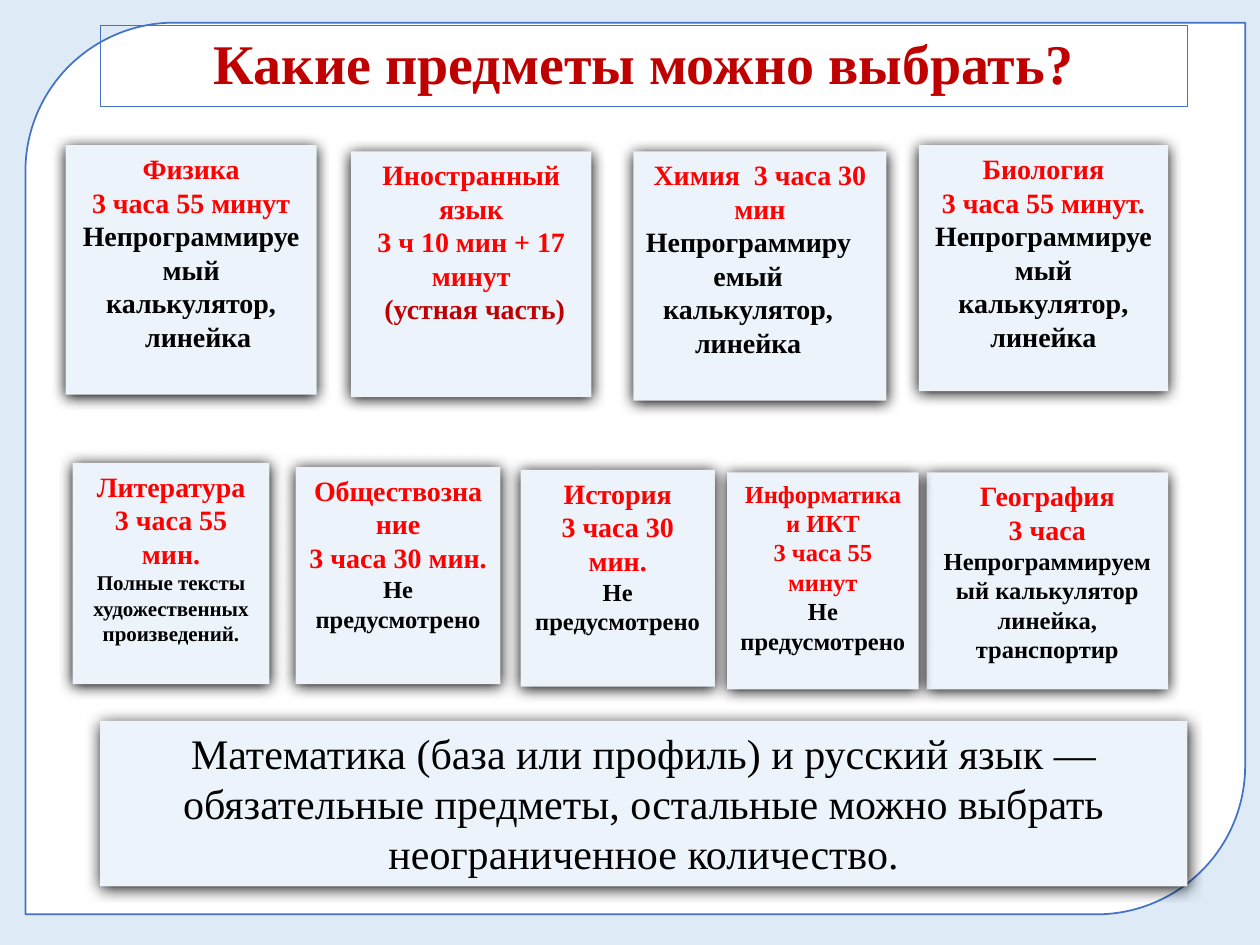
import pptx
import pptx.dml.color
import pptx.enum.shapes
import pptx.enum.text
import pptx.oxml
import pptx.oxml.ns
import pptx.util

Pt = pptx.util.Pt
SHAPES = pptx.enum.shapes.MSO_SHAPE
ANCHOR = pptx.enum.text.MSO_ANCHOR

COLORS = {
    "background": "DEEBF7",
    "frame": "FFFFFF",
    "outline": "4472C4",
    "card": "ECF3FA",
    "subject": "FF0000",
    "accent": "C00000",
    "body": "000000",
}
FONT = "Times New Roman"

RED = {"color": "subject"}
SMALL = {"size": 14}
SMALL_RED = {"size": 14, "color": "subject"}
NARROW = {"right_indent": 13.5}

# Each card: (left, top, width, height), then its paragraphs with their format.
CARDS = [
    ((37.5, 83, 143.5, 142.5), [
        ("Физика", RED),
        ("3 часа 55 минут", RED),
        ("Непрограммируемый калькулятор,", {}),
        ("линейка", {"left_indent": 8}),
    ]),
    ((200.5, 86.5, 137.5, 140.5), [
        ("Иностранный язык", RED),
        ("3 ч 10 мин + 17 минут", RED),
        ("(устная часть)", {"color": "accent", "left_indent": 4}),
    ]),
    ((362, 86.5, 144.5, 142.5), [
        ("Химия  3 часа 30 мин", RED),
        ("Непрограммируемый калькулятор,", NARROW),
        ("линейка", NARROW),
    ]),
    ((525, 83, 142.5, 140.5), [
        ("Биология", RED),
        ("3 часа 55 минут.", RED),
        ("Непрограммируемый калькулятор,", {}),
        ("линейка", {}),
    ]),
    ((41.5, 264.5, 112.5, 126.5), [
        ("Литература", RED),
        ("3 часа 55 мин.", RED),
        ("Полные тексты художественных произведений.", {"size": 12}),
    ]),
    ((169, 267, 117, 124), [
        ("Обществознание", RED),
        ("3 часа 30 мин.", RED),
        ("Не предусмотрено", SMALL),
    ]),
    ((297.5, 268.5, 111, 124), [
        ("История", RED),
        ("3 часа 30 мин.", RED),
        ("Не предусмотрено", SMALL),
    ]),
    ((529.5, 270, 138, 124), [
        ("География", RED),
        ("3 часа", RED),
        ("Непрограммируемый калькулятор", SMALL),
        ("линейка, транспортир", SMALL),
    ]),
    ((415.5, 270, 109.5, 124), [
        ("Информатика", SMALL_RED),
        ("и ИКТ", SMALL_RED),
        ("3 часа 55 минут", SMALL_RED),
        ("Не предусмотрено", SMALL),
    ]),
    ((57, 412, 621.5, 94.5), [
        ("Математика (база или профиль) и русский язык — обязательные предметы, "
         "остальные можно выбрать неограниченное количество.",
         {"size": 24, "bold": False}),
    ]),
]


def rgb(name):
    return pptx.dml.color.RGBColor.from_string(COLORS[name])


def add_box(slide, box, kind=SHAPES.RECTANGLE, fill=None, line_width=None):
    shape = slide.shapes.add_shape(kind, *map(Pt, box))
    shape.shadow.inherit = False
    if fill:
        shape.fill.solid()
        shape.fill.fore_color.rgb = rgb(fill)
    else:
        shape.fill.background()
    if line_width:
        shape.line.color.rgb = rgb("outline")
        shape.line.width = Pt(line_width)
    else:
        shape.line.fill.background()
    shape.text_frame.word_wrap = True
    shape.text_frame.vertical_anchor = ANCHOR.TOP
    return shape


def add_text(frame, text, size=16, color="body", bold=True,
             left_indent=0, right_indent=0, line_spacing=1.0):
    """Append one centred paragraph to the frame."""
    paragraph = frame.add_paragraph() if frame.text else frame.paragraphs[0]
    paragraph.alignment = pptx.enum.text.PP_ALIGN.CENTER
    paragraph.line_spacing = line_spacing
    properties = paragraph._p.get_or_add_pPr()
    properties.set("marL", str(Pt(left_indent)))
    properties.set("marR", str(Pt(right_indent)))
    run = paragraph.add_run()
    run.text = text
    run.font.name = FONT
    run.font.size = Pt(size)
    run.font.bold = bold
    run.font.color.rgb = rgb(color)


def add_soft_shadow(shape):
    effects = shape._element.spPr.find(pptx.oxml.ns.qn("a:effectLst"))
    effects.append(pptx.oxml.parse_xml(
        f'<a:outerShdw {pptx.oxml.ns.nsdecls("a")} blurRad="{Pt(8.5)}" '
        f'dist="{Pt(1)}" dir="5400000" algn="ctr" rotWithShape="0">'
        f'<a:srgbClr val="{COLORS["body"]}"/></a:outerShdw>'))


def add_card(slide, box, paragraphs):
    card = add_box(slide, box, fill="card")
    add_soft_shadow(card)
    for text, text_format in paragraphs:
        add_text(card.text_frame, text, **text_format)


def add_title(slide, text):
    title = add_box(slide, (57.5, 14.5, 621, 46.5), line_width=0.75)
    title.text_frame.vertical_anchor = ANCHOR.MIDDLE
    add_text(title.text_frame, text, size=32, color="accent", line_spacing=0.9)


def main():
    presentation = pptx.Presentation()
    presentation.slide_width, presentation.slide_height = Pt(720), Pt(540)
    slide = presentation.slides.add_slide(presentation.slide_layouts[6])
    slide.background.fill.solid()
    slide.background.fill.fore_color.rgb = rgb("background")

    add_box(slide, (14.5, 13, 697, 509.5), SHAPES.ROUND_2_DIAG_RECTANGLE,
            fill="frame", line_width=1)
    for box, paragraphs in CARDS:
        add_card(slide, box, paragraphs)
    add_title(slide, "Какие предметы можно выбрать?")
    presentation.save("out.pptx")


if __name__ == "__main__":
    main()
